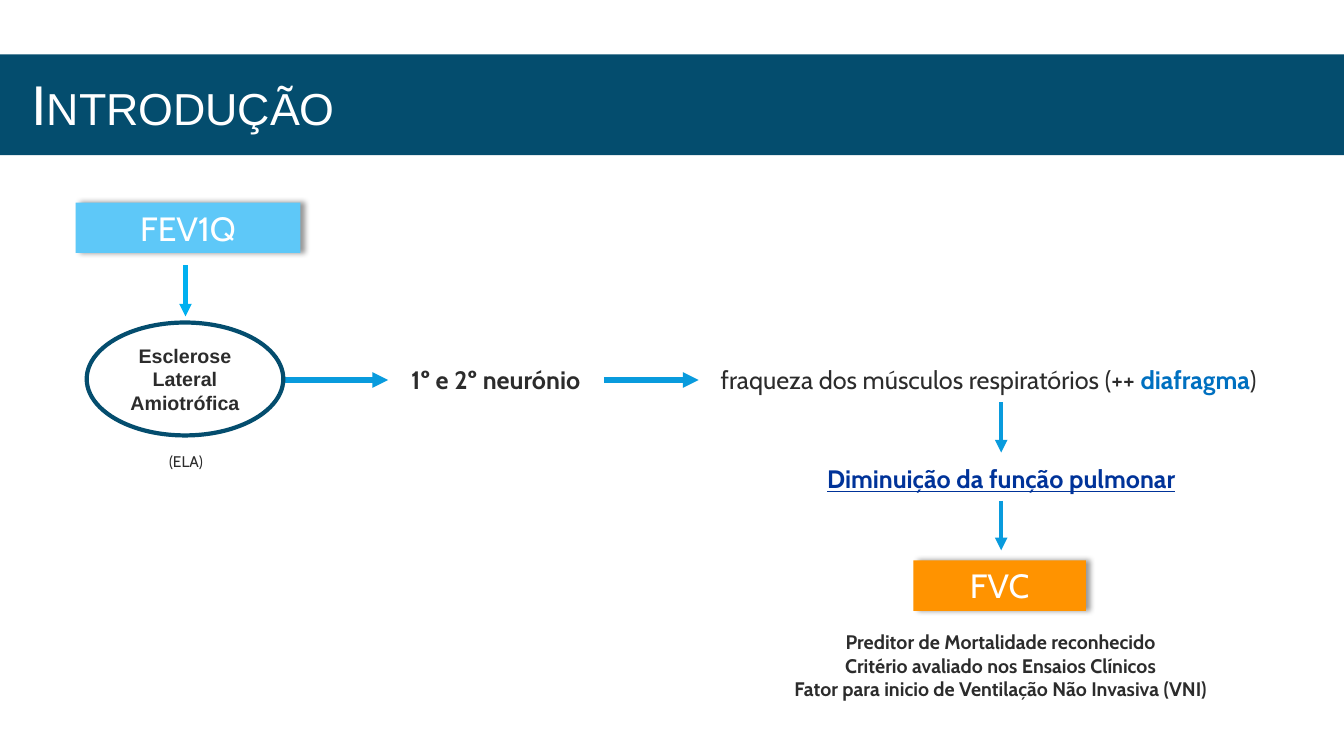
from lxml import etree
from pptx import Presentation
from pptx.dml.color import RGBColor
from pptx.enum.shapes import MSO_CONNECTOR, MSO_SHAPE
from pptx.enum.text import MSO_ANCHOR, PP_ALIGN
from pptx.oxml import parse_xml
from pptx.oxml.ns import nsdecls, qn
from pptx.util import Inches, Pt

STRAIGHT = MSO_CONNECTOR.STRAIGHT
RECTANGLE, OVAL = MSO_SHAPE.RECTANGLE, MSO_SHAPE.OVAL
LEFT, CENTER = PP_ALIGN.LEFT, PP_ALIGN.CENTER
TOP, MIDDLE = MSO_ANCHOR.TOP, MSO_ANCHOR.MIDDLE

WHITE = RGBColor(0xFF, 0xFF, 0xFF)
INK = RGBColor(0x2C, 0x2C, 0x2C)
PETROL = RGBColor(0x04, 0x4D, 0x6E)
SKY = RGBColor(0x5E, 0xC8, 0xF8)
ORANGE = RGBColor(0xFF, 0x93, 0x00)
ARROW_BLUE = RGBColor(0x09, 0x9B, 0xDD)
BRIGHT_BLUE = RGBColor(0x00, 0xB0, 0xF0)
MID_BLUE = RGBColor(0x00, 0x70, 0xC0)
NAVY = RGBColor(0x00, 0x33, 0x99)

SLIDE_WIDTH, SLIDE_HEIGHT = 13.33, 7.5
DISEASE_X, LUNG_X = 1.84, 9.93  # centres of the two vertical chains
CHAIN_Y = 3.77  # centre of the horizontal chain
LABEL_HEIGHT = 0.4

SHADOW = (
    f'<a:effectLst {nsdecls("a")}><a:outerShdw blurRad="{Pt(4)}" dist="{Pt(3)}" dir="0" '
    'algn="l" rotWithShape="0"><a:srgbClr val="000000"><a:alpha val="40000"/>'
    '</a:srgbClr></a:outerShdw></a:effectLst>'
)

presentation = Presentation()
presentation.slide_width = Inches(SLIDE_WIDTH)
presentation.slide_height = Inches(SLIDE_HEIGHT)
slide = presentation.slides.add_slide(presentation.slide_layouts[5])


def write(shape, paragraphs, size, align=CENTER, anchor=TOP, font="Cabin"):
    """Fill a shape with paragraphs, each a list of (text, colour, bold) runs."""
    frame = shape.text_frame
    frame.word_wrap = True
    frame.vertical_anchor = anchor
    for index, runs in enumerate(paragraphs):
        paragraph = frame.add_paragraph() if index else frame.paragraphs[0]
        paragraph.alignment = align
        for text, color, bold in runs:
            run = paragraph.add_run()
            run.text = text
            run.font.name = font
            run.font.size = Pt(size)
            run.font.bold = bold
            run.font.color.rgb = color
    return frame


def add_block(kind, left, top, width, height, fill):
    block = slide.shapes.add_shape(
        kind, Inches(left), Inches(top), Inches(width), Inches(height))
    block.shadow.inherit = False
    block.fill.solid()
    block.fill.fore_color.rgb = fill
    block.line.fill.background()
    return block


# Title on its band
title = slide.shapes.title
title.left, title.top = Inches(0.21), Inches(0.25)
title.width, title.height = Inches(12.91), Inches(1.65)
title_frame = write(title, [[("Introdução", WHITE, False)]], 40, LEFT, MIDDLE, "Arial")
title_paragraph = title_frame.paragraphs[0]
title_paragraph.line_spacing = 0.85
title_paragraph.runs[0].font._element.set("cap", "small")
band = add_block(RECTANGLE, 0, 0.54, SLIDE_WIDTH, 1, PETROL)
title.element.addprevious(band.element)

# Arrows: start x, start y, end x, end y, colour, width
arrows = [
    (2.59, CHAIN_Y, 3.85, CHAIN_Y, ARROW_BLUE, 3.75),
    (5.99, CHAIN_Y, 6.93, CHAIN_Y, ARROW_BLUE, 3.75),
    (DISEASE_X, 2.63, DISEASE_X, 3.14, BRIGHT_BLUE, 3),
    (LUNG_X, 3.99, LUNG_X, 4.49, ARROW_BLUE, 3),
    (LUNG_X, 4.97, LUNG_X, 5.46, ARROW_BLUE, 3),
]
for start_x, start_y, end_x, end_y, color, width in arrows:
    arrow = slide.shapes.add_connector(
        STRAIGHT, Inches(start_x), Inches(start_y), Inches(end_x), Inches(end_y))
    arrow.line.color.rgb = color
    arrow.line.width = Pt(width)
    etree.SubElement(arrow.line._get_or_add_ln(), qn("a:tailEnd"), type="triangle")
    etree.SubElement(arrow.element.spPr, qn("a:effectLst"))

# Measures
for name, left, top, width, fill in [
    ("FEV1Q", 0.75, 2.01, 2.23, SKY),
    ("FVC", 9.06, 5.56, 1.71, ORANGE),
]:
    measure = add_block(RECTANGLE, left, top, width, 0.5, fill)
    properties = measure.element.spPr
    properties.replace(properties.find(qn("a:effectLst")), parse_xml(SHADOW))
    write(measure, [[(name, WHITE, False)]], 24)

# Disease
disease = add_block(OVAL, 0.86, 3.2, 1.95, 1.12, WHITE)
disease.line.color.rgb = PETROL
disease.line.width = Pt(3)
write(disease, [[("Esclerose Lateral Amiotrófica", INK, True)]], 14,
      anchor=MIDDLE, font="Arial")

# Labels: left, top, width, height, size, alignment, paragraphs
weakness = [
    ("fraqueza dos músculos respiratórios (++ ", INK, False),
    ("diafragma", MID_BLUE, True),
    (")", INK, False),
]
fvc_roles = [
    [("Preditor de Mortalidade reconhecido", INK, True)],
    [("Critério avaliado nos Ensaios Clínicos", INK, True)],
    [("Fator para inicio de Ventilação Não Invasiva (VNI)", INK, True)],
]
decline = [("Diminuição da função pulmonar", NAVY, True)]
chain_top = CHAIN_Y - LABEL_HEIGHT / 2
labels = [
    (3.98, chain_top, 3.55, LABEL_HEIGHT, 18, LEFT, [[("1º e 2º neurónio", INK, True)]]),
    (7.05, chain_top, 5.76, LABEL_HEIGHT, 18, LEFT, [weakness]),
    (8.07, 4.55, 3.72, LABEL_HEIGHT, 18, CENTER, [decline]),
    (7.29, 6.2, 5.27, 1.01, 14, CENTER, fvc_roles),
    (1.5, 4.44, 0.69, 0.29, 11, CENTER, [[("(ELA)", INK, False)]]),
]
for left, top, width, height, size, align, paragraphs in labels:
    label = slide.shapes.add_textbox(
        Inches(left), Inches(top), Inches(width), Inches(height))
    frame = write(label, paragraphs, size, align)
    if decline in paragraphs:
        frame.paragraphs[0].runs[0].font.underline = True

presentation.save("out.pptx")
